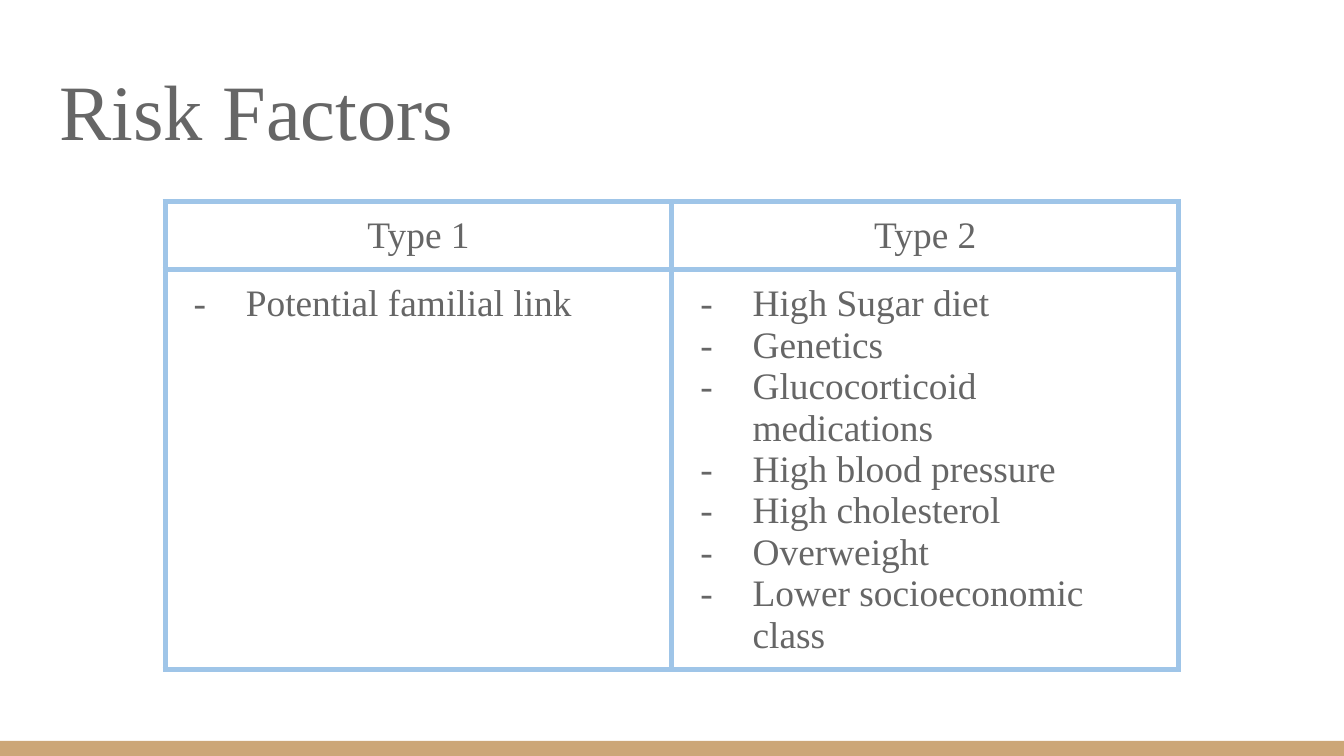
"""Build the Risk Factors slide comparing type 1 and type 2."""
import pptx
import pptx.dml.color
import pptx.enum.shapes
import pptx.enum.text
import pptx.oxml
import pptx.oxml.ns
import pptx.util
import lxml.etree

Pt = pptx.util.Pt
ALIGN = pptx.enum.text.PP_ALIGN
COLORS = {"text": "666666", "border": "9FC5E8", "band": "CCA677", "page": "FFFFFF"}
FACTORS = {
    "Type 1": ["Potential familial link"],
    "Type 2": [
        "High Sugar diet",
        "Genetics",
        "Glucocorticoid medications",
        "High blood pressure",
        "High cholesterol",
        "Overweight",
        "Lower socioeconomic class",
    ],
}
ROW_HEIGHTS = [32] + [26] * 6 + [45]


def rgb(name):
    return pptx.dml.color.RGBColor.from_string(COLORS[name])


def add_xml(parent, tag, **attributes):
    return lxml.etree.SubElement(parent, pptx.oxml.ns.qn(tag), **attributes)


class SlideBuilder:
    font = "Times New Roman"
    title_size = 42
    body_size = 20
    inset = 7.2
    border_width = 3

    def __init__(self, page):
        self.page = page
        page.background.fill.solid()
        page.background.fill.fore_color.rgb = rgb("page")

    def set_insets(self, target):
        for side in ("left", "right", "top", "bottom"):
            setattr(target, f"margin_{side}", Pt(self.inset))

    def format_para(self, para, size, align):
        para.alignment = align
        for run in para.runs:
            run.font.name = self.font
            run.font.size = Pt(size)
            run.font.color.rgb = rgb("text")

    def add_band(self, left, top, width, height):
        band = self.page.shapes.add_shape(
            pptx.enum.shapes.MSO_SHAPE.RECTANGLE,
            Pt(left), Pt(top), Pt(width), Pt(height))
        band.shadow.inherit = False
        band.fill.solid()
        band.fill.fore_color.rgb = rgb("band")
        band.line.fill.background()

    def set_title(self, text, left, top, width, height):
        title = self.page.shapes.title
        title.left, title.top = Pt(left), Pt(top)
        title.width, title.height = Pt(width), Pt(height)
        frame = title.text_frame
        frame.text = text
        frame.word_wrap = True
        frame.auto_size = pptx.enum.text.MSO_AUTO_SIZE.NONE
        frame.vertical_anchor = pptx.enum.text.MSO_ANCHOR.BOTTOM
        self.set_insets(frame)
        self.format_para(frame.paragraphs[0], self.title_size, ALIGN.LEFT)

    def add_bullet(self, para):
        properties = para._p.get_or_add_pPr()
        properties.set("marL", str(Pt(36)))
        properties.set("indent", str(-Pt(28)))
        color = add_xml(properties, "a:buClr")
        add_xml(color, "a:srgbClr", val=COLORS["text"])
        add_xml(properties, "a:buFont", typeface=self.font)
        add_xml(properties, "a:buChar", char="-")

    def style_cell(self, cell):
        self.set_insets(cell)
        properties = cell._tc.get_or_add_tcPr()
        for tag in ("a:lnL", "a:lnR", "a:lnT", "a:lnB"):
            line = add_xml(properties, tag, w=str(Pt(self.border_width)))
            fill = add_xml(line, "a:solidFill")
            add_xml(fill, "a:srgbClr", val=COLORS["border"])
        cell.fill.background()

    def fill_cell(self, cell, lines, align, bulleted=False):
        cell.text_frame.text = "\n".join(lines)
        for para in cell.text_frame.paragraphs:
            self.format_para(para, self.body_size, align)
            if bulleted:
                self.add_bullet(para)

    def add_factor_table(self, factors, left, top, width):
        table = self.page.shapes.add_table(
            len(ROW_HEIGHTS), len(factors),
            Pt(left), Pt(top), Pt(width), Pt(sum(ROW_HEIGHTS))).table
        table.first_row = table.horz_banding = False
        for row, height in zip(table.rows, ROW_HEIGHTS):
            row.height = Pt(height)
        for cell in table.iter_cells():
            self.style_cell(cell)
        for column, (heading, items) in enumerate(factors.items()):
            self.fill_cell(table.cell(0, column), [heading], ALIGN.CENTER)
            body = table.cell(1, column)
            body.merge(table.cell(len(ROW_HEIGHTS) - 1, column))
            self.fill_cell(body, items, ALIGN.LEFT, bulleted=True)


def main():
    deck = pptx.Presentation()
    deck.slide_width, deck.slide_height = Pt(720), Pt(405)
    builder = SlideBuilder(deck.slides.add_slide(deck.slide_layouts[5]))
    builder.add_band(0, 397, 720, 8)
    builder.set_title("Risk Factors", 24.5, 25.5, 671, 65.5)
    builder.add_factor_table(FACTORS, 88.5, 108, 543)
    deck.save("out.pptx")


if __name__ == "__main__":
    main()
